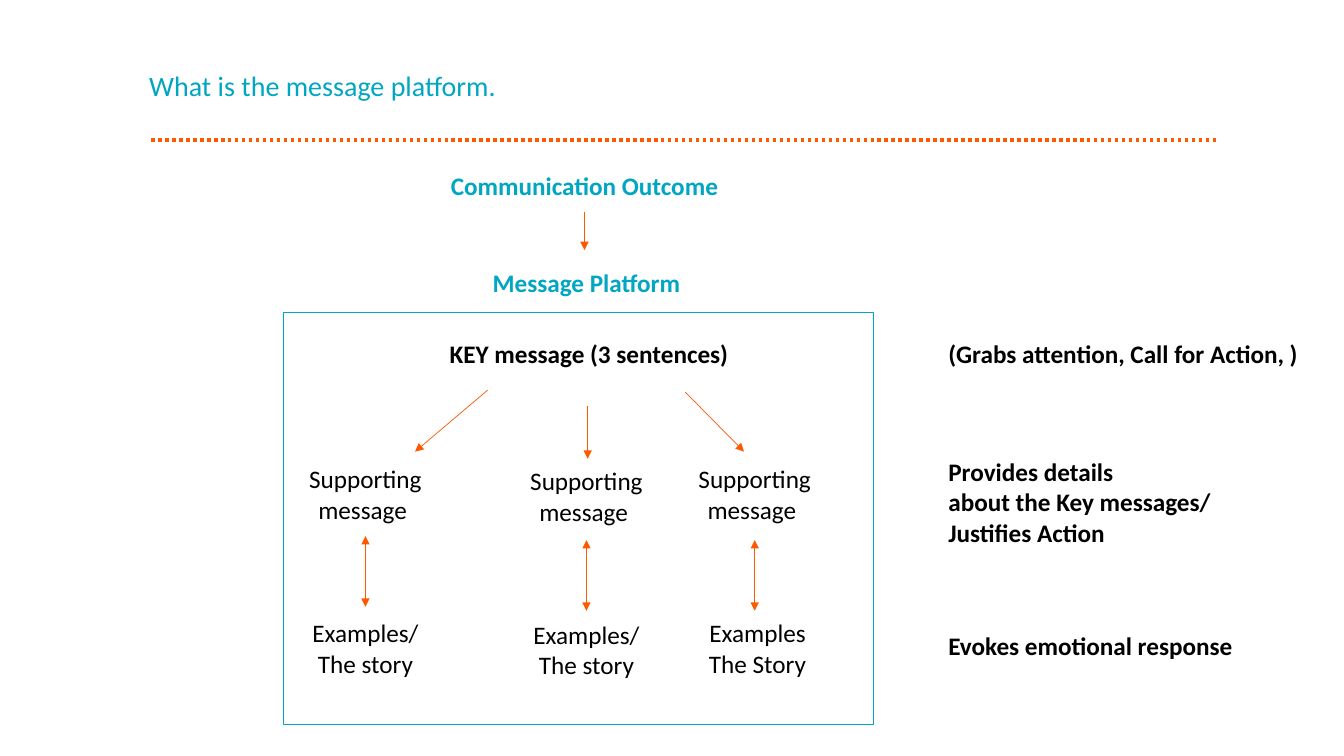
"""Build the message platform slide: outcome, key message, supporting messages and stories."""
from lxml import etree
from pptx import Presentation
from pptx.dml.color import RGBColor
from pptx.enum import dml, shapes, text
from pptx.oxml import ns
from pptx.util import Cm, Pt

TEAL = RGBColor(0x00, 0xA6, 0xC2)
ORANGE = RGBColor(0xFF, 0x59, 0x00)
BLACK = RGBColor(0, 0, 0)
CENTER, LEFT = text.PP_ALIGN.CENTER, text.PP_ALIGN.LEFT

prs = Presentation()
prs.slide_width, prs.slide_height = Cm(33.87), Cm(19.05)
s = prs.slides.add_slide(prs.slide_layouts[6])


def add_text(lines, x, y, w, h, color=BLACK, bold=False, align=CENTER, size=18, wrap=True):
    tf = s.shapes.add_textbox(Cm(x), Cm(y), Cm(w), Cm(h)).text_frame
    tf.word_wrap = wrap
    tf.text = "\n".join(lines)
    for p in tf.paragraphs:
        p.alignment = align
        p.font.name, p.font.size, p.font.bold = "Calibri", Pt(size), bold
        p.font.color.rgb = color
    return tf


def add_line(x1, y1, x2, y2, width=0.5, ends=("tailEnd",)):
    c = s.shapes.add_connector(shapes.MSO_CONNECTOR.STRAIGHT, Cm(x1), Cm(y1), Cm(x2), Cm(y2))
    c.line.color.rgb, c.line.width = ORANGE, Pt(width)
    ln = c.line._get_or_add_ln()
    for end in ends:
        etree.SubElement(ln, ns.qn(f"a:{end}"), type="triangle")
    etree.SubElement(c._element.spPr, ns.qn("a:effectLst"))
    return c


tf = add_text(["What is the message platform."], 3.51, 1.47, 18.57, 1.47, TEAL, align=LEFT, size=20)
tf.vertical_anchor = text.MSO_ANCHOR.MIDDLE
tf.paragraphs[0].line_spacing = 0.9
rule = add_line(3.81, 3.53, 30.71, 3.53, 2.5, ends=())
rule.line.dash_style = dml.MSO_LINE.ROUND_DOT

sp = s.shapes.add_shape(shapes.MSO_SHAPE.RECTANGLE, Cm(7.14), Cm(7.87), Cm(14.88), Cm(10.39))
sp.shadow.inherit = False
sp.fill.background()
sp.line.color.rgb, sp.line.width = TEAL, Pt(1)

add_text(["Communication Outcome"], 8.38, 4.17, 12.7, 1.02, TEAL, True)
add_text(["Message Platform"], 9.6, 6.6, 10.36, 1.02, TEAL, True)
add_text(["KEY message (3 sentences)"], 10.54, 8.41, 8.61, 1.02, bold=True)

for x1, y1, x2, y2 in [
    (14.73, 5.33, 14.73, 6.3),
    (12.29, 9.83, 10.46, 11.38),
    (14.81, 10.24, 14.81, 11.56),
    (17.27, 9.88, 18.75, 11.38),
]:
    add_line(x1, y1, x2, y2)

for center, message_top, arrow_top, story_top, story in [
    (9.21, 11.56, 13.51, 15.44, ["Examples/", "The story"]),
    (14.78, 11.61, 13.61, 15.47, ["Examples/", "The story"]),
    (19.02, 11.56, 13.61, 15.44, [" Examples", " The Story"]),
]:
    add_text(["Supporting message "], center - 2.26, message_top, 4.52, 1.8)
    add_line(center, arrow_top, center, arrow_top + 1.78, ends=("headEnd", "tailEnd"))
    add_text(story, center - 2.69, story_top, 5.38, 1.8)

for lines, y, w, h in [
    (["(Grabs attention, Call for Action, )"], 8.41, 9.58, 1.02),
    (["Provides details", "about the Key messages/", "Justifies Action"], 11.38, 7.19, 2.57),
    (["Evokes emotional response"], 15.75, 7.72, 1.02),
]:
    add_text(lines, 23.65, y, w, h, bold=True, align=LEFT, wrap=False)

prs.save("out.pptx")
